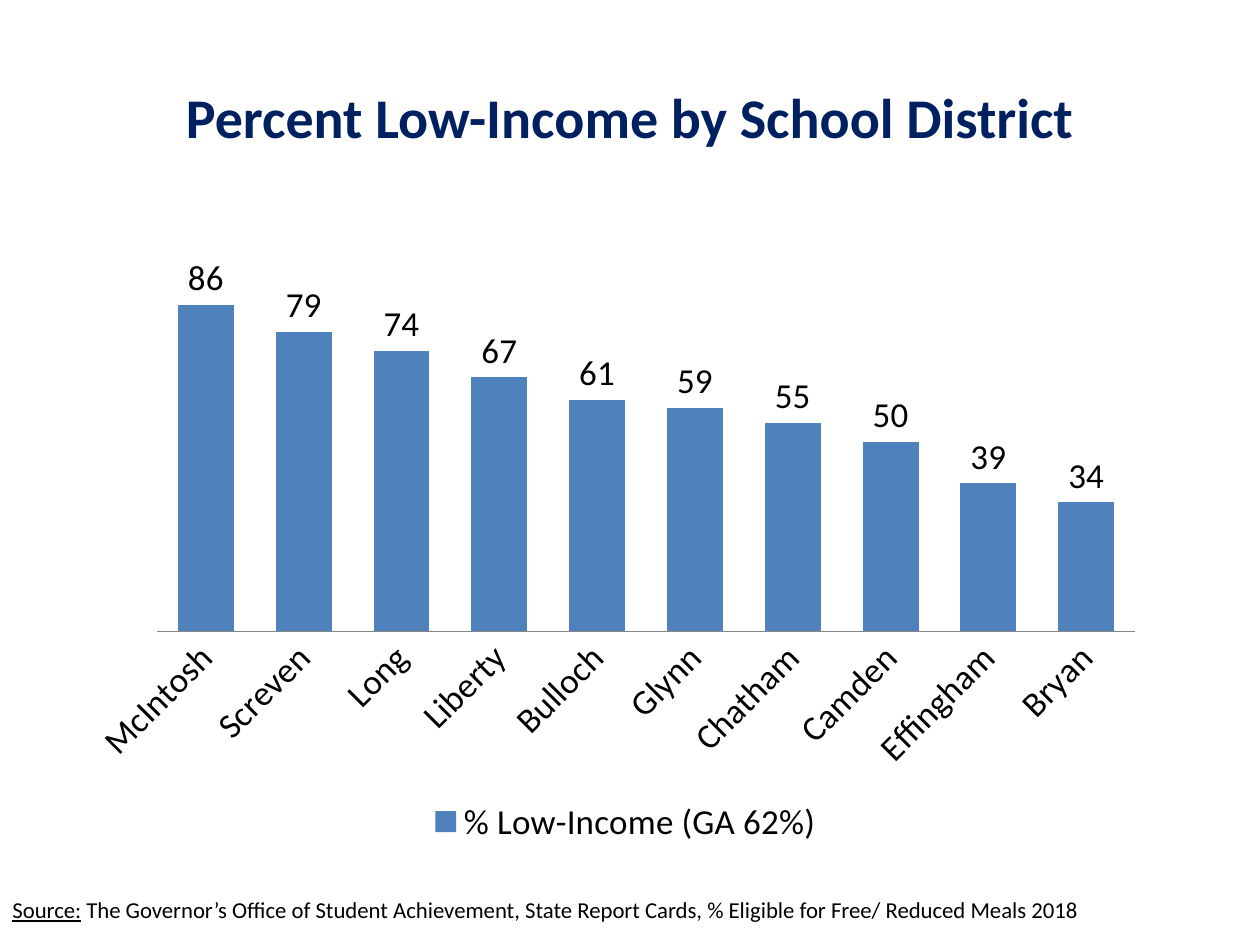
from dataclasses import dataclass

from pptx import Presentation
from pptx.chart.data import CategoryChartData
from pptx.dml.color import RGBColor
from pptx.enum.chart import XL_CHART_TYPE as ChartType
from pptx.enum.chart import XL_LABEL_POSITION as LabelPosition
from pptx.enum.chart import XL_LEGEND_POSITION as LegendPosition
from pptx.enum.chart import XL_TICK_MARK as TickMark
from pptx.enum.text import MSO_ANCHOR as Anchor
from pptx.enum.text import MSO_AUTO_SIZE as AutoSize
from pptx.enum.text import PP_ALIGN as Align
from pptx.oxml import parse_xml
from pptx.oxml.ns import nsdecls, qn
from pptx.util import Inches, Pt


@dataclass(frozen=True)
class Theme:
    font: str = "Calibri"
    navy: str = "002060"
    black: str = "000000"
    bar: str = "4F81BD"
    axis: str = "868686"
    title_size: int = 32
    chart_size: int = 20
    source_size: int = 13


THEME = Theme()
DISTRICTS = {
    "McIntosh": 86, "Screven": 79, "Long": 74, "Liberty": 67, "Bulloch": 61,
    "Glynn": 59, "Chatham": 55, "Camden": 50, "Effingham": 39, "Bryan": 34,
}


def format_font(font, size, color=THEME.black, bold=False, underline=False):
    font.name = THEME.font
    font.size = Pt(size)
    font.bold = bold
    font.underline = underline
    font.color.rgb = RGBColor.from_string(color)


def add_text(paragraph, text, **font_format):
    run = paragraph.add_run()
    run.text = text
    format_font(run.font, **font_format)


def add_title(slide, text):
    title = slide.shapes.title
    title.left, title.top = Inches(0.5), Inches(0.3)
    title.width, title.height = Inches(9), Inches(1.25)
    title.text_frame.vertical_anchor = Anchor.MIDDLE
    paragraph = title.text_frame.paragraphs[0]
    paragraph.alignment = Align.CENTER
    add_text(paragraph, text, size=THEME.title_size, color=THEME.navy, bold=True)


def add_source(slide, label, text):
    box = slide.shapes.add_textbox(Inches(0), Inches(7.14), Inches(9.61), Inches(0.25))
    frame = box.text_frame
    frame.word_wrap = True
    frame.auto_size = AutoSize.SHAPE_TO_FIT_TEXT
    paragraph = frame.paragraphs[0]
    paragraph.line_spacing = 0.6
    add_text(paragraph, label, size=THEME.source_size, underline=True)
    add_text(paragraph, text, size=THEME.source_size)


def set_plot_area(chart, x, y, width, height):
    plot_area = chart._chartSpace.chart.plotArea
    for layout in plot_area.findall(qn("c:layout")):
        plot_area.remove(layout)
    places = "".join(
        f'<c:{name} val="{value}"/>'
        for name, value in (("x", x), ("y", y), ("w", width), ("h", height))
    )
    plot_area.insert(0, parse_xml(
        f'<c:layout {nsdecls("c")}><c:manualLayout><c:layoutTarget val="inner"/>'
        f'<c:xMode val="edge"/><c:yMode val="edge"/>{places}</c:manualLayout></c:layout>'
    ))


def format_axes(chart):
    category_axis = chart.category_axis
    category_axis.major_tick_mark = TickMark.NONE
    category_axis.has_major_gridlines = False
    category_axis.format.line.color.rgb = RGBColor.from_string(THEME.axis)
    format_font(category_axis.tick_labels.font, THEME.chart_size)
    category_axis._element.find(qn("c:txPr")).find(qn("a:bodyPr")).set("rot", "-2700000")

    value_axis = chart.value_axis
    value_axis.minimum_scale, value_axis.maximum_scale = 0, 100
    value_axis.has_major_gridlines = False
    value_axis.visible = False


def format_columns(plot):
    plot.gap_width = 75
    plot.vary_by_categories = False
    fill = plot.series[0].format.fill
    fill.solid()
    fill.fore_color.rgb = RGBColor.from_string(THEME.bar)
    plot.has_data_labels = True
    labels = plot.data_labels
    labels.show_value = True
    labels.number_format = "0"
    labels.number_format_is_linked = False
    labels.position = LabelPosition.OUTSIDE_END
    format_font(labels.font, THEME.chart_size)


def add_column_chart(slide, series_name, values):
    data = CategoryChartData(number_format="0")
    data.categories = list(values)
    data.add_series(series_name, list(values.values()))
    chart = slide.shapes.add_chart(
        ChartType.COLUMN_CLUSTERED,
        Inches(0.75), Inches(2), Inches(8.42), Inches(4.75), data,
    ).chart
    chart.has_title = False
    format_font(chart.font, THEME.chart_size)
    format_axes(chart)
    format_columns(chart.plots[0])
    chart.has_legend = True
    chart.legend.position = LegendPosition.BOTTOM
    chart.legend.include_in_layout = False
    format_font(chart.legend.font, THEME.chart_size)
    set_plot_area(chart, 0.058, 0, 0.923, 0.634)


def main():
    presentation = Presentation()
    presentation.slide_width, presentation.slide_height = Inches(10), Inches(7.5)
    slide = presentation.slides.add_slide(presentation.slide_layouts.get_by_name("Title Only"))
    add_title(slide, "Percent Low-Income by School District")
    add_source(
        slide, "Source:",
        " The Governor’s Office of Student Achievement, State Report Cards, "
        "% Eligible for Free/ Reduced Meals 2018",
    )
    add_column_chart(slide, "% Low-Income (GA 62%)", DISTRICTS)
    presentation.save("out.pptx")


if __name__ == "__main__":
    main()
